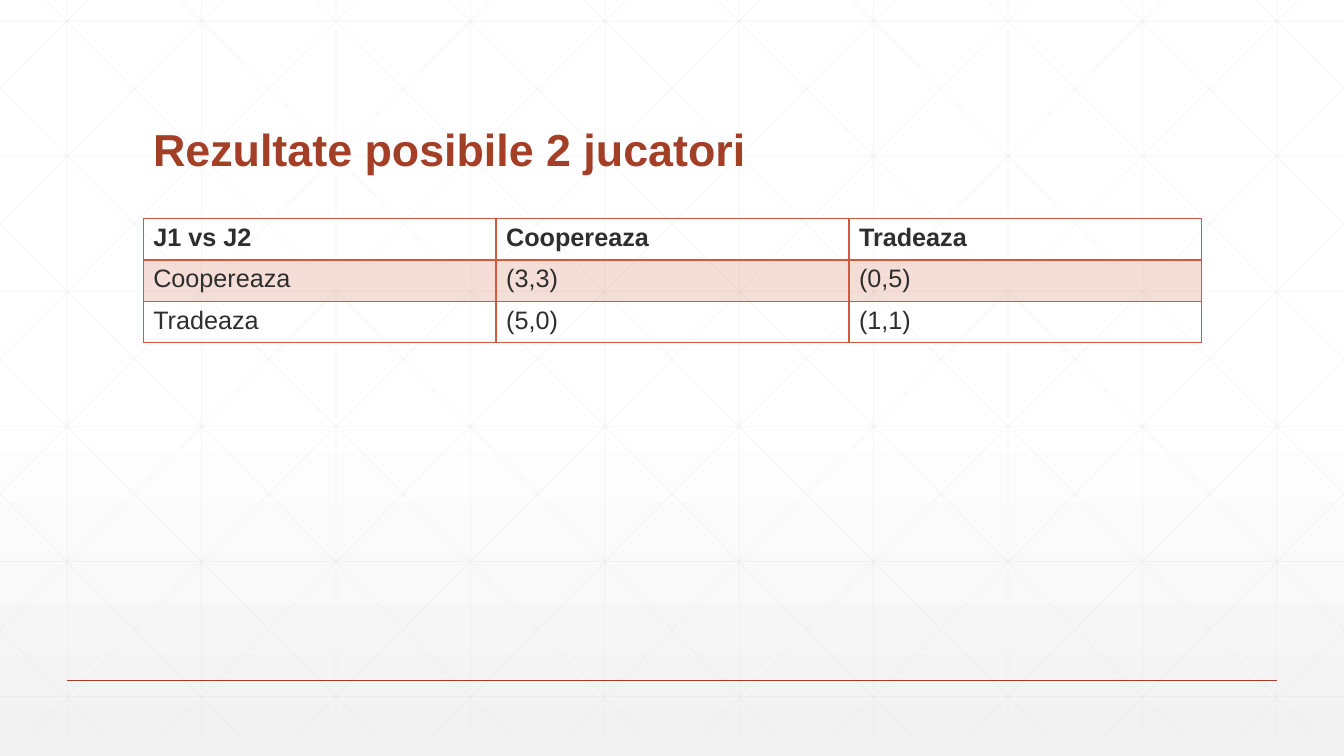
"""Build a slide with the payoff table of a two-player game."""
from dataclasses import dataclass
from lxml import etree
from pptx import Presentation
from pptx import util as u
from pptx.dml.color import RGBColor
from pptx.enum import shapes, text
from pptx.oxml.ns import qn

TITLE = "Rezultate posibile 2 jucatori"
PAYOFFS = [
    ("J1 vs J2", "Coopereaza", "Tradeaza"),
    ("Coopereaza", "(3,3)", "(0,5)"),
    ("Tradeaza", "(5,0)", "(1,1)"),
]


@dataclass(frozen=True)
class Theme:
    font: str = "Arial"
    title_size: int = 32
    cell_size: int = 18
    accent: str = "A43F27"
    border: str = "D15A3E"
    ink: str = "2D2E2D"
    grid: str = "D9D9D9"
    paper: str = "FFFFFF"
    shade: str = "F2F2F2"


THEME = Theme()
WIDTH, HEIGHT = 13.33, 7.5
STEP = WIDTH / 10
GRID_TOP, GRID_BOTTOM = -0.21, 7.29
ROW_TOP, ROW_STEP = 0.21, 1.34
DIAGONAL_START, DIAGONAL_RUN = 0.25, 7.455
LEFT, CONTENT_WIDTH = 1.42, 10.5
TITLE_TOP, TITLE_HEIGHT = 0.55, 1.25
TABLE_TOP, ROW_HEIGHT = 2.17, 0.41


def set_alpha(color, percent):
    etree.SubElement(color, qn("a:alpha"), val=str(percent * 1000))


def write(frame, content, size, color, bold=False, spacing=None):
    para = frame.paragraphs[0]
    para.line_spacing = spacing
    span = para.add_run()
    span.text = content
    span.font.name, span.font.size, span.font.bold = THEME.font, u.Pt(size), bold
    span.font.color.rgb = RGBColor.from_string(color)


def draw_line(parent, start, end, color, width, alpha=None):
    points = [u.Inches(value) for value in (*start, *end)]
    line = parent.add_connector(shapes.MSO_CONNECTOR.STRAIGHT, *points)
    line.line.width = u.Pt(width)
    line.line.color.rgb = RGBColor.from_string(color)
    properties = line._element.spPr
    if alpha:
        set_alpha(properties.find(".//" + qn("a:srgbClr")), alpha)
    etree.SubElement(properties, qn("a:effectLst"))


def grid_lines():
    lines = []
    for column in range(10):
        x = STEP * (column + 0.5)
        lines.append(((x, GRID_TOP), (x, GRID_BOTTOM)))
    for row in range(6):
        y = ROW_TOP + ROW_STEP * row
        lines.append(((0, y), (WIDTH, y)))
    slope = (GRID_BOTTOM - GRID_TOP) / DIAGONAL_RUN
    for index in range(-5, 10):
        origin = DIAGONAL_START + STEP * index
        ends = [(x, GRID_TOP + (x - origin) * slope)
                for x in (max(0, origin), min(WIDTH, origin + DIAGONAL_RUN))]
        lines.append(ends)
        lines.append([(WIDTH - x, y) for x, y in ends])
    return lines


def paint_background(slide):
    fill = slide.background.fill
    fill.gradient()
    fill.gradient_angle = 270
    stops = ((0.53, THEME.paper), (1, THEME.shade))
    for stop, (position, color) in zip(fill.gradient_stops, stops):
        stop.position = position
        stop.color.rgb = RGBColor.from_string(color)


def set_borders(cell, widths):
    properties = cell._tc.get_or_add_tcPr()
    for index, (side, width) in enumerate(widths.items()):
        edge = etree.Element(qn("a:ln" + side), w=str(u.Pt(width)))
        fill = etree.SubElement(edge, qn("a:solidFill"))
        etree.SubElement(fill, qn("a:srgbClr"), val=THEME.border)
        properties.insert(index, edge)


def add_payoffs(slide):
    rows, columns = len(PAYOFFS), len(PAYOFFS[0])
    table = slide.shapes.add_table(
        rows, columns, u.Inches(LEFT), u.Inches(TABLE_TOP),
        u.Inches(CONTENT_WIDTH), u.Inches(ROW_HEIGHT * rows)).table
    table.horz_banding = False
    for row, values in enumerate(PAYOFFS):
        for column, value in enumerate(values):
            cell = table.cell(row, column)
            write(cell.text_frame, value, THEME.cell_size, THEME.ink, bold=row == 0)
            if row == 1:
                cell.fill.solid()
                cell.fill.fore_color.rgb = RGBColor.from_string(THEME.border)
                set_alpha(cell._tc.tcPr.find(".//" + qn("a:srgbClr")), 20)
            else:
                cell.fill.background()
            set_borders(cell, {"L": 1, "R": 1, "T": 2 if row == 1 else 1,
                               "B": 2 if row == 0 else 1})


def main():
    deck = Presentation()
    deck.slide_width, deck.slide_height = u.Inches(WIDTH), u.Inches(HEIGHT)
    slide = deck.slides.add_slide(deck.slide_layouts[6])
    paint_background(slide)
    grid = slide.shapes.add_group_shape()
    for start, end in grid_lines():
        draw_line(grid.shapes, start, end, THEME.grid, 0.5, alpha=25)
    footer_y = HEIGHT * 0.9
    draw_line(slide.shapes, (STEP / 2, footer_y), (WIDTH - STEP / 2, footer_y),
              THEME.accent, 1)
    box = slide.shapes.add_textbox(u.Inches(LEFT), u.Inches(TITLE_TOP),
                                   u.Inches(CONTENT_WIDTH), u.Inches(TITLE_HEIGHT))
    box.text_frame.word_wrap = True
    box.text_frame.vertical_anchor = text.MSO_ANCHOR.BOTTOM
    write(box.text_frame, TITLE, THEME.title_size, THEME.accent, bold=True, spacing=0.9)
    add_payoffs(slide)
    deck.save("out.pptx")


if __name__ == "__main__":
    main()
